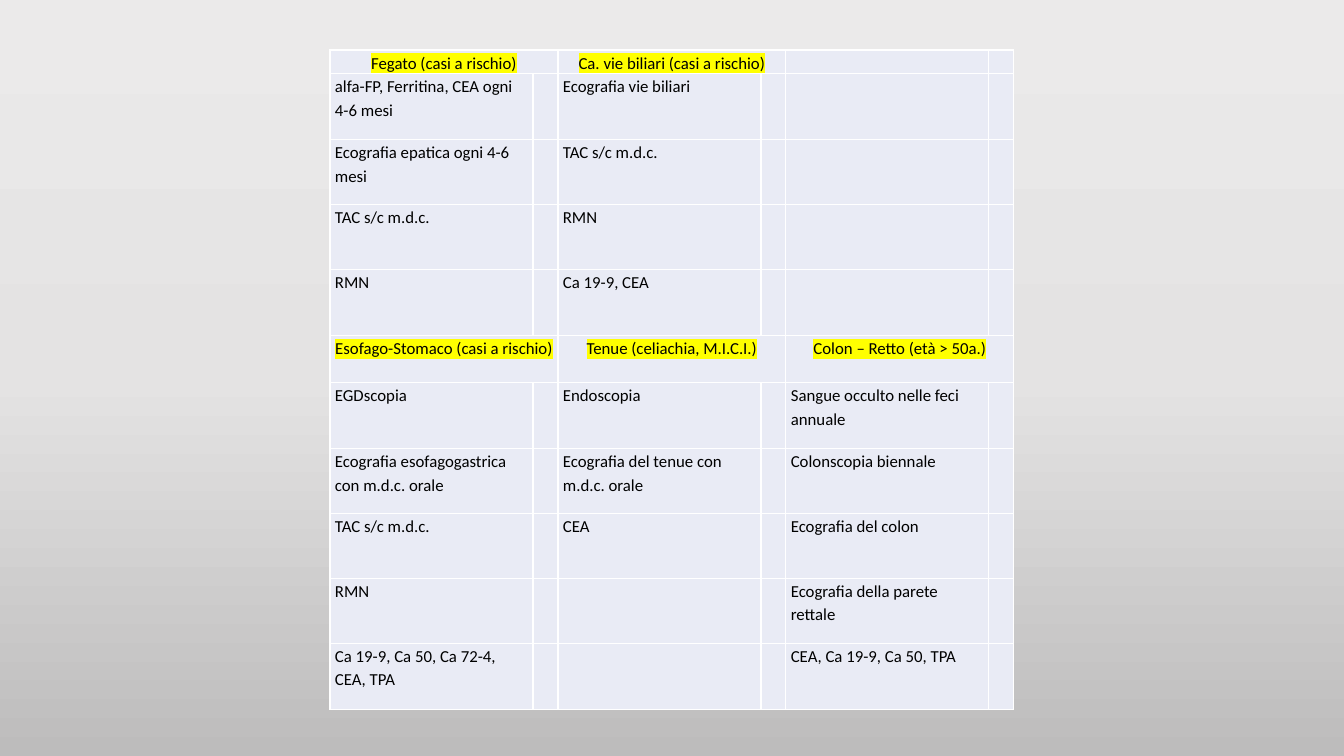
import copy
import itertools

import pptx
import pptx.dml.color
import pptx.enum.text
import pptx.oxml
import pptx.oxml.ns
import pptx.util

PX = 914400 / 100.8
FONT = "Calibri"
BLACK = pptx.dml.color.RGBColor(0x00, 0x00, 0x00)
WHITE = pptx.dml.color.RGBColor(0xFF, 0xFF, 0xFF)
YELLOW = pptx.dml.color.RGBColor(0xFF, 0xFF, 0x00)
CELL_BLUE = pptx.dml.color.RGBColor(0xE9, 0xEB, 0xF5)
BACKDROP = [
    (0, pptx.dml.color.RGBColor(0xEB, 0xEA, 0xEA)),
    (0.5, pptx.dml.color.RGBColor(0xE4, 0xE3, 0xE3)),
    (1, pptx.dml.color.RGBColor(0xBD, 0xBC, 0xBC)),
]

# Each row holds one entry per organ; every organ spans a wide and a narrow column
SCREENING = [
    ("Fegato (casi a rischio)", "Ca. vie biliari (casi a rischio)", ""),
    ("alfa-FP, Ferritina, CEA ogni 4-6 mesi", "Ecografia vie biliari", ""),
    ("Ecografia epatica ogni 4-6 mesi", "TAC s/c m.d.c.", ""),
    ("TAC s/c m.d.c.", "RMN", ""),
    ("RMN", "Ca 19-9, CEA", ""),
    ("Esofago-Stomaco (casi a rischio)", "Tenue (celiachia, M.I.C.I.)",
     "Colon – Retto (età > 50a.)"),
    ("EGDscopia", "Endoscopia", "Sangue occulto nelle feci annuale"),
    ("Ecografia esofagogastrica con m.d.c. orale",
     "Ecografia del tenue con m.d.c. orale", "Colonscopia biennale"),
    ("TAC s/c m.d.c.", "CEA", "Ecografia del colon"),
    ("RMN", "", "Ecografia della parete rettale"),
    ("Ca 19-9, Ca 50, Ca 72-4, CEA, TPA", "", "CEA, Ca 19-9, Ca 50, TPA"),
]
HEADING_ROWS = (0, 5)
COLUMN_EDGES = (0, 203, 228, 431, 456, 659, 684)
ROW_EDGES = (0, 23, 89, 154, 219, 285, 332, 398, 463, 528, 593, 659)


def px(length):
    return pptx.util.Emu(round(length * PX))


def paint_background(slide):
    fill = slide.background.fill
    fill.gradient()
    fill.gradient_angle = 270
    stop_list = slide.element.find(".//" + pptx.oxml.ns.qn("a:gsLst"))
    stop_list.insert(1, copy.deepcopy(stop_list[0]))
    for stop, (position, color) in zip(fill.gradient_stops, BACKDROP):
        stop.position = position
        stop.color.rgb = color


def draw_borders(cell):
    properties = cell._tc.get_or_add_tcPr()
    for index, side in enumerate(("lnL", "lnR", "lnT", "lnB")):
        properties.insert(index, pptx.oxml.parse_xml(
            f'<a:{side} {pptx.oxml.ns.nsdecls("a")} w="12700"><a:solidFill>'
            f'<a:srgbClr val="{WHITE}"/></a:solidFill></a:{side}>'))


def style_cell(cell):
    cell.fill.solid()
    cell.fill.fore_color.rgb = CELL_BLUE
    cell.margin_left = cell.margin_right = px(5)
    cell.margin_top = cell.margin_bottom = 0
    draw_borders(cell)
    paragraph = cell.text_frame.paragraphs[0]
    paragraph.line_spacing = 1.15
    paragraph.space_after = pptx.util.Pt(10)
    paragraph.font.name = FONT
    paragraph.font.size = pptx.util.Pt(12)
    paragraph.font.color.rgb = BLACK


def highlight(run):
    run.font._element.append(pptx.oxml.parse_xml(
        f'<a:highlight {pptx.oxml.ns.nsdecls("a")}>'
        f'<a:srgbClr val="{YELLOW}"/></a:highlight>'))


def add_screening_table(slide, left, top, width, height):
    table = slide.shapes.add_table(
        len(SCREENING), len(COLUMN_EDGES) - 1,
        px(left), px(top), px(width), px(height)).table
    table.first_row = table.horz_banding = False
    for column, (start, end) in zip(table.columns, itertools.pairwise(COLUMN_EDGES)):
        column.width = px(end - start)
    for row, (start, end) in zip(table.rows, itertools.pairwise(ROW_EDGES)):
        row.height = px(end - start)
    for cell in table.iter_cells():
        style_cell(cell)

    for row, exams in enumerate(SCREENING):
        for organ, exam in enumerate(exams):
            if not exam:
                continue
            cell = table.cell(row, 2 * organ)
            paragraph = cell.text_frame.paragraphs[0]
            run = paragraph.add_run()
            run.text = exam
            if row in HEADING_ROWS:
                cell.merge(table.cell(row, 2 * organ + 1))
                paragraph.alignment = pptx.enum.text.PP_ALIGN.CENTER
                highlight(run)


def main():
    presentation = pptx.Presentation()
    presentation.slide_width = px(1344)
    presentation.slide_height = px(756)
    slide = presentation.slides.add_slide(presentation.slide_layouts[6])
    paint_background(slide)
    add_screening_table(slide, 330, 50, COLUMN_EDGES[-1], ROW_EDGES[-1])
    presentation.save("out.pptx")


if __name__ == "__main__":
    main()
